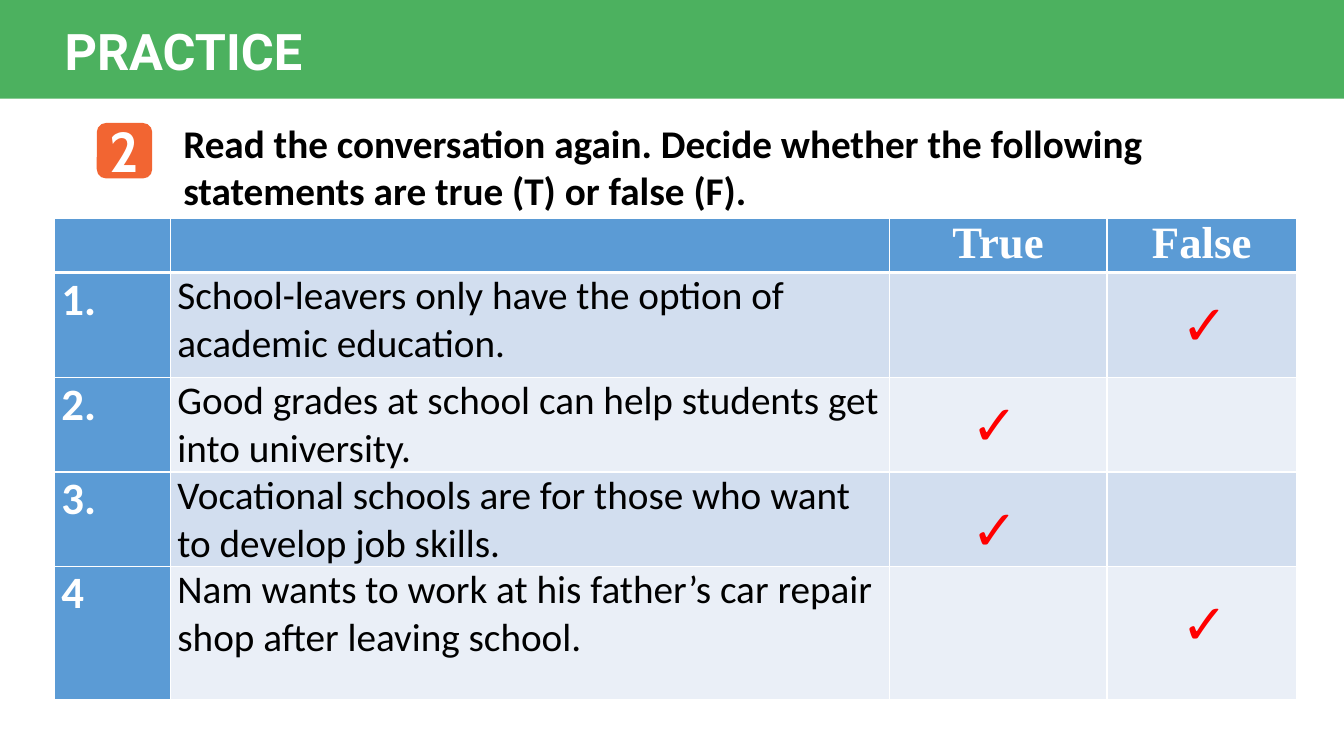
from lxml import etree
from pptx import Presentation
from pptx.dml.color import RGBColor
from pptx.enum.shapes import MSO_SHAPE
from pptx.enum.text import MSO_ANCHOR, MSO_AUTO_SIZE, PP_ALIGN
from pptx.oxml.ns import qn
from pptx.util import Inches, Pt

LEFT, CENTER = PP_ALIGN.LEFT, PP_ALIGN.CENTER
TOP, MIDDLE = MSO_ANCHOR.TOP, MSO_ANCHOR.MIDDLE
NO_AUTOFIT = MSO_AUTO_SIZE.NONE
RECTANGLE, ROUNDED = MSO_SHAPE.RECTANGLE, MSO_SHAPE.ROUNDED_RECTANGLE

WHITE = RGBColor(0xFF, 0xFF, 0xFF)
BLACK = RGBColor(0x00, 0x00, 0x00)
RED = RGBColor(0xFF, 0x00, 0x00)
GREEN = RGBColor(0x4C, 0xB1, 0x5F)
ORANGE = RGBColor(0xF2, 0x65, 0x32)
BLUE = RGBColor(0x5B, 0x9B, 0xD5)
BAND_DARK = RGBColor(0xD2, 0xDE, 0xEF)
BAND_LIGHT = RGBColor(0xEA, 0xEF, 0xF7)


def write(text_frame, text, size, font="Calibri", color=BLACK, bold=False, align=LEFT):
    text_frame.word_wrap = True
    paragraph = text_frame.paragraphs[0]
    paragraph.alignment = align
    run = paragraph.add_run()
    run.text = text
    run.font.name = font
    run.font.size = Pt(size)
    run.font.bold = bold
    run.font.color.rgb = color


def style_cell(cell, fill, bottom_width):
    """Set the borders and then the fill, in the order the schema asks for."""
    properties = cell._tc.get_or_add_tcPr()
    for side, width in (("L", 1), ("R", 1), ("T", 1), ("B", bottom_width)):
        line = etree.SubElement(properties, qn(f"a:ln{side}"), w=str(Pt(width)))
        solid = etree.SubElement(line, qn("a:solidFill"))
        etree.SubElement(solid, qn("a:srgbClr"), val=str(WHITE))
    cell.fill.solid()
    cell.fill.fore_color.rgb = fill


presentation = Presentation()
presentation.slide_width = Inches(13.33)
presentation.slide_height = Inches(7.5)
slide = presentation.slides.add_slide(presentation.slide_layouts[5])
shapes = slide.shapes

# Header band and task badge
for kind, color, box in (
    (RECTANGLE, GREEN, (0, 0, 13.33, 0.98)),
    (ROUNDED, ORANGE, (0.96, 1.22, 0.55, 0.55)),
):
    shape = shapes.add_shape(kind, *map(Inches, box))
    shape.shadow.inherit = False
    shape.fill.solid()
    shape.fill.fore_color.rgb = color
    shape.line.fill.background()
    shapes.title.element.addprevious(shape.element)

# Title
title = shapes.title
title.left, title.top, title.width, title.height = map(Inches, (0.54, 0.14, 5, 0.71))
title.text_frame.auto_size = NO_AUTOFIT
title.text_frame.vertical_anchor = MIDDLE
write(title.text_frame, "PRACTICE", 36, font="Roboto", color=WHITE, bold=True)

# Task number and instruction
badge_number = shapes.add_textbox(*map(Inches, (0.99, 1.11, 0.49, 0.77)))
write(badge_number.text_frame, "2", 40, font="Cabin", color=WHITE, bold=True, align=CENTER)
instruction = shapes.add_textbox(*map(Inches, (1.72, 1.13, 11.47, 1.04)))
write(
    instruction.text_frame,
    "Read the conversation again. Decide whether the following "
    "statements are true (T) or false (F).",
    28,
    bold=True,
)

# Statement table
ROWS = [
    ("", "", "True", "False"),
    ("1.", "School-leavers only have the option of academic education.", "", ""),
    ("2.", "Good grades at school can help students get into university.", "", ""),
    ("3.", "Vocational schools are for those who want to develop job skills.", "", ""),
    ("4", "Nam wants to work at his father’s car repair shop after leaving school.", "", ""),
]
COLUMN_WIDTHS = (1.15, 7.13, 2.16, 1.88)
ROW_HEIGHTS = (0.51, 1.04, 0.94, 0.88, 1.32)

table = shapes.add_table(
    len(ROWS), len(COLUMN_WIDTHS), *map(Inches, (0.54, 2.17, 12.32, 4.69))
).table
for column, width in zip(table.columns, COLUMN_WIDTHS):
    column.width = Inches(width)
for row, height in zip(table.rows, ROW_HEIGHTS):
    row.height = Inches(height)

for row_index, texts in enumerate(ROWS):
    is_header = row_index == 0
    band = BAND_DARK if row_index % 2 else BAND_LIGHT
    for column_index, text in enumerate(texts):
        cell = table.cell(row_index, column_index)
        is_heading = is_header or column_index == 0
        style_cell(cell, BLUE if is_heading else band, 3 if is_header else 1)
        if not text:
            continue
        cell.margin_left = cell.margin_right = Inches(0.07)
        cell.margin_top = cell.margin_bottom = 0
        cell.vertical_anchor = TOP
        write(
            cell.text_frame,
            text,
            32 if is_heading else 28,
            font="Times New Roman" if is_header else "Calibri",
            color=WHITE if is_heading else BLACK,
            bold=is_heading,
            align=CENTER if is_header else LEFT,
        )

# Answer ticks
TRUE_LEFT, FALSE_LEFT = 9.54, 11.62
for left, top in (
    (FALSE_LEFT, 2.82),
    (TRUE_LEFT, 3.82),
    (TRUE_LEFT, 4.86),
    (FALSE_LEFT, 5.79),
):
    tick = shapes.add_textbox(*map(Inches, (left, top, 0.94, 0.77)))
    write(tick.text_frame, "✓", 40, color=RED)

presentation.save("out.pptx")
